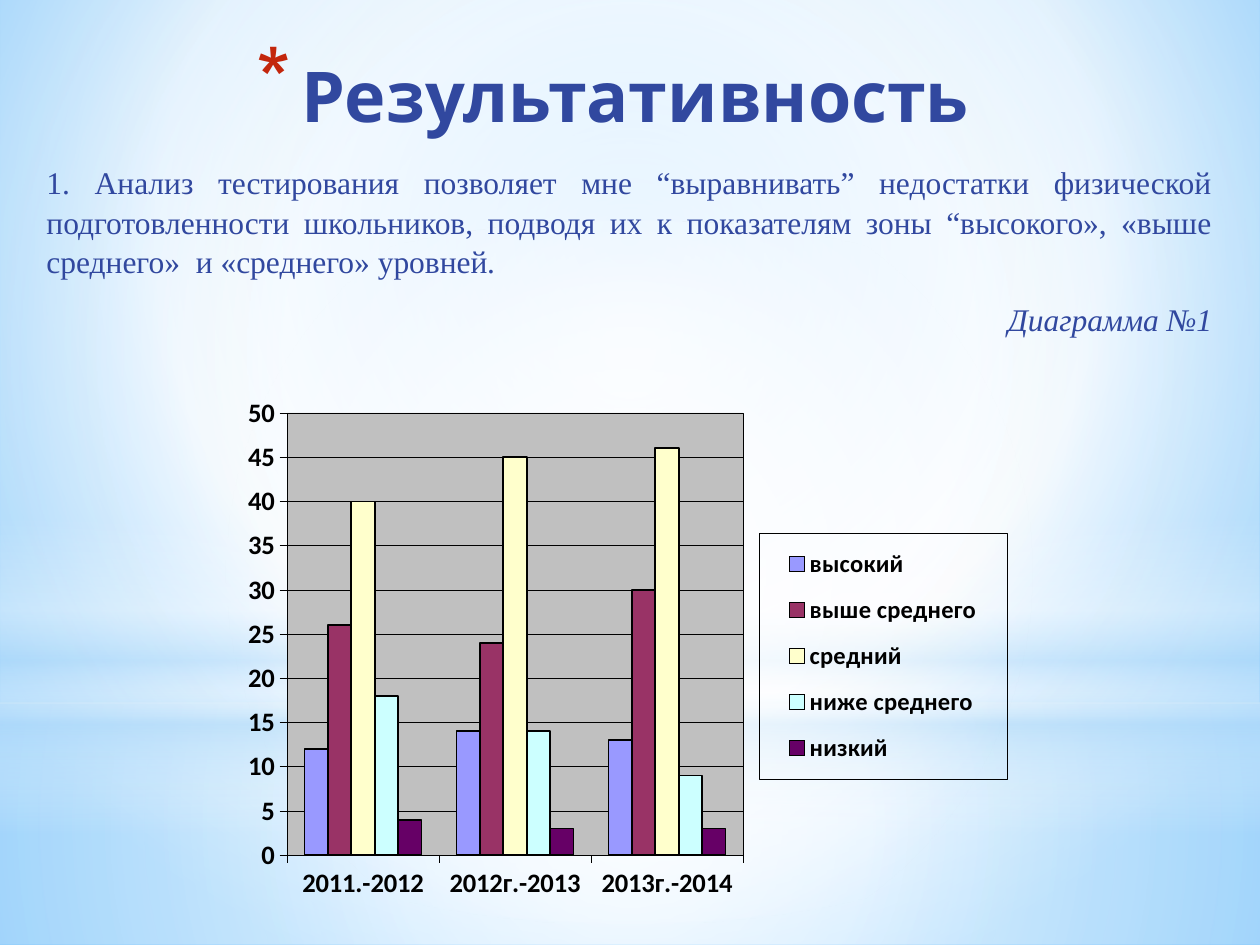
from lxml import etree
from pptx import Presentation
from pptx.chart import data as chart_data
from pptx.dml.color import RGBColor
from pptx.enum import chart as charts, shapes, text
from pptx.oxml import ns, parse_xml
from pptx.util import Inches, Pt

COLORS = {
    "blue": "31489F", "red": "C3260C", "black": "000000", "white": "FFFFFF",
    "sky": "B4DCFA", "plot": "C0C0C0", "title_end": "404040",
    "bg_start": "9ED5FF", "bg_end": "5BB9FF",
}
LEVELS = [
    ("высокий", (12, 14, 13), "9999FF"),
    ("выше среднего", (26, 24, 30), "993366"),
    ("средний", (40, 45, 46), "FFFFCC"),
    ("ниже среднего", (18, 14, 9), "CCFFFF"),
    ("низкий", (4, 3, 3), "660066"),
]
YEARS = ["2011.-2012", "2012г.-2013", "2013г.-2014"]
CENTER = (50, 50, 50, 50)


def rgb(name):
    return RGBColor.from_string(COLORS[name])


def set_gradient(fill, owner, stops, focus=None):
    """Stops are (position, color name, opacity), in percent; no focus means vertical."""
    fill.solid()
    fill.fore_color.rgb = rgb("white")
    marks = "".join(
        f'<a:gs pos="{pos * 1000}"><a:srgbClr val="{COLORS[color]}">'
        f'<a:alpha val="{opacity * 1000}"/></a:srgbClr></a:gs>'
        for pos, color, opacity in stops)
    if focus:
        edges = " ".join(f'{side}="{value * 1000}"' for side, value in zip("ltrb", focus))
        shade = f'<a:path path="circle"><a:fillToRect {edges}/></a:path>'
    else:
        shade = '<a:lin ang="5400000" scaled="0"/>'
    solid = owner.xpath(".//a:solidFill")[0]
    solid.getparent().replace(solid, parse_xml(
        f'<a:gradFill {ns.nsdecls("a")} rotWithShape="1"><a:gsLst>{marks}</a:gsLst>'
        f'{shade}</a:gradFill>'))


def add_glow(page, kind, place, stops, focus=None):
    shape = page.shapes.add_shape(kind, *map(Inches, place))
    shape.shadow.inherit = False
    shape.line.fill.background()
    set_gradient(shape.fill, shape._element.spPr, stops, focus)


def add_text_box(page, place, anchor):
    frame = page.shapes.add_textbox(*map(Inches, place)).text_frame
    frame.word_wrap = True
    frame.vertical_anchor = anchor
    return frame


def add_span(para, words, size, font, color, bold=False, italic=False):
    span = para.add_run()
    span.text = words
    span.font.size, span.font.name = Pt(size), font
    span.font.bold, span.font.italic = bold, italic
    span.font.color.rgb = rgb(color)


def add_title(page):
    para = add_text_box(page, (1.38, 0.21, 7.12, 1.02), text.MSO_ANCHOR.MIDDLE).paragraphs[0]
    para.alignment = text.PP_ALIGN.CENTER
    add_span(para, "Результативность", 40, "Karla", "blue", bold=True)
    add_span(para, " ", 46, "Karla", "title_end")
    props = para._p.get_or_add_pPr()
    props.set("marL", str(Inches(0.35)))
    props.set("indent", str(-Inches(0.35)))
    color = etree.SubElement(props, ns.qn("a:buClr"))
    etree.SubElement(color, ns.qn("a:srgbClr"), val=COLORS["red"])
    etree.SubElement(props, ns.qn("a:buSzPct"), val="128000")
    etree.SubElement(props, ns.qn("a:buChar"), char="*")


def add_body(page):
    frame = add_text_box(page, (0.27, 1.23, 9.45, 1.57), text.MSO_ANCHOR.TOP)
    analysis, caption = frame.paragraphs[0], frame.add_paragraph()
    style = (18, "Times New Roman", "blue")
    add_span(analysis, "1. Анализ тестирования позволяет мне “выравнивать” недостатки "
             "физической подготовленности школьников, подводя их к показателям зоны "
             "“высокого», «выше среднего»  и «среднего» уровней", *style)
    add_span(analysis, ".", *style, italic=True)
    add_span(caption, "Диаграмма №1", *style, italic=True)
    for para, align, spacing, after in (
            (analysis, text.PP_ALIGN.JUSTIFY, 1.05, 10),
            (caption, text.PP_ALIGN.RIGHT, 0.9, 3)):
        para.alignment, para.line_spacing = align, spacing
        para.space_before, para.space_after = Pt(3.6), Pt(after)


def set_font(font, size):
    font.size, font.name, font.bold = Pt(size), "Calibri", True
    font.color.rgb = rgb("black")


def set_line(line, width):
    line.color.rgb = rgb("black")
    line.width = Pt(width)


def set_layout(part, index, place, target=""):
    """Places a chart part by fractions of the chart area."""
    for old in part.findall(ns.qn("c:layout")):
        part.remove(old)
    sizes = "".join(f'<c:{key} val="{value}"/>' for key, value in zip("xywh", place))
    part.insert(index, parse_xml(
        f'<c:layout {ns.nsdecls("c")}><c:manualLayout>{target}<c:xMode val="edge"/>'
        f'<c:yMode val="edge"/>{sizes}</c:manualLayout></c:layout>'))


def frame_part(fill):
    return parse_xml(
        f'<c:spPr {ns.nsdecls("c", "a")}>{fill}<a:ln w="3175"><a:solidFill>'
        f'<a:srgbClr val="{COLORS["black"]}"/></a:solidFill></a:ln></c:spPr>')


def add_level_chart(page):
    content = chart_data.CategoryChartData()
    content.categories = YEARS
    for name, values, _ in LEVELS:
        content.add_series(name, values)
    place = map(Inches, (1.77, 2.65, 6.35, 4.65))
    chart = page.shapes.add_chart(
        charts.XL_CHART_TYPE.COLUMN_CLUSTERED, *place, content).chart
    chart.has_title = False
    set_font(chart.font, 15.2)

    plot = chart.plots[0]
    plot.gap_width, plot.overlap, plot.vary_by_categories = 150, 0, False
    for series, (_, _, color) in zip(plot.series, LEVELS):
        series.format.fill.solid()
        series.format.fill.fore_color.rgb = RGBColor.from_string(color)
        set_line(series.format.line, 1)

    for axis in (chart.category_axis, chart.value_axis):
        axis.major_tick_mark = charts.XL_TICK_MARK.OUTSIDE
        set_font(axis.tick_labels.font, 15.2)
        set_line(axis.format.line, 0.25)
    values = chart.value_axis
    values.minimum_scale, values.maximum_scale, values.major_unit = 0, 50, 5
    set_line(values.major_gridlines.format.line, 0.25)

    chart.has_legend = True
    legend = chart.legend
    legend.position = charts.XL_LEGEND_POSITION.RIGHT
    legend.include_in_layout = False
    set_font(legend.font, 14)
    set_layout(legend._element, 1, (0.67, 0.34, 0.31, 0.42))
    legend._element.find(ns.qn("c:txPr")).addprevious(frame_part("<a:noFill/>"))

    area = chart._chartSpace.chart.plotArea
    set_layout(area, 0, (0.08, 0.135, 0.57, 0.755), '<c:layoutTarget val="inner"/>')
    area.append(frame_part(
        f'<a:solidFill><a:srgbClr val="{COLORS["plot"]}"/></a:solidFill>'))


def add_backdrop(page):
    set_gradient(page.background.fill, page._element, [
        (0, "bg_start", 100), (60, "white", 100), (100, "bg_end", 100)], (20, 10, 20, 60))
    rect, oval = shapes.MSO_SHAPE.RECTANGLE, shapes.MSO_SHAPE.OVAL
    add_glow(page, rect, (0, 5.58, 10, 1.92),
             [(0, "white", 91), (37, "white", 76), (100, "sky", 79)], CENTER)
    add_glow(page, rect, (0, 0, 10, 5.58),
             [(0, "white", 89), (48, "white", 62), (100, "sky", 79)], CENTER)
    add_glow(page, rect, (0, 4.12, 10, 2.5),
             [(0, "white", 0), (29, "white", 30), (45, "sky", 40),
              (55, "white", 26), (65, "sky", 60), (100, "white", 0)])
    add_glow(page, oval, (0, 1.75, 10, 5.58),
             [(0, "white", 100), (56, "white", 0)], CENTER)


def main():
    deck = Presentation()
    deck.slide_width, deck.slide_height = Inches(10), Inches(7.5)
    page = deck.slides.add_slide(deck.slide_layouts[6])
    add_backdrop(page)
    add_title(page)
    add_body(page)
    add_level_chart(page)
    deck.save("out.pptx")


if __name__ == "__main__":
    main()
